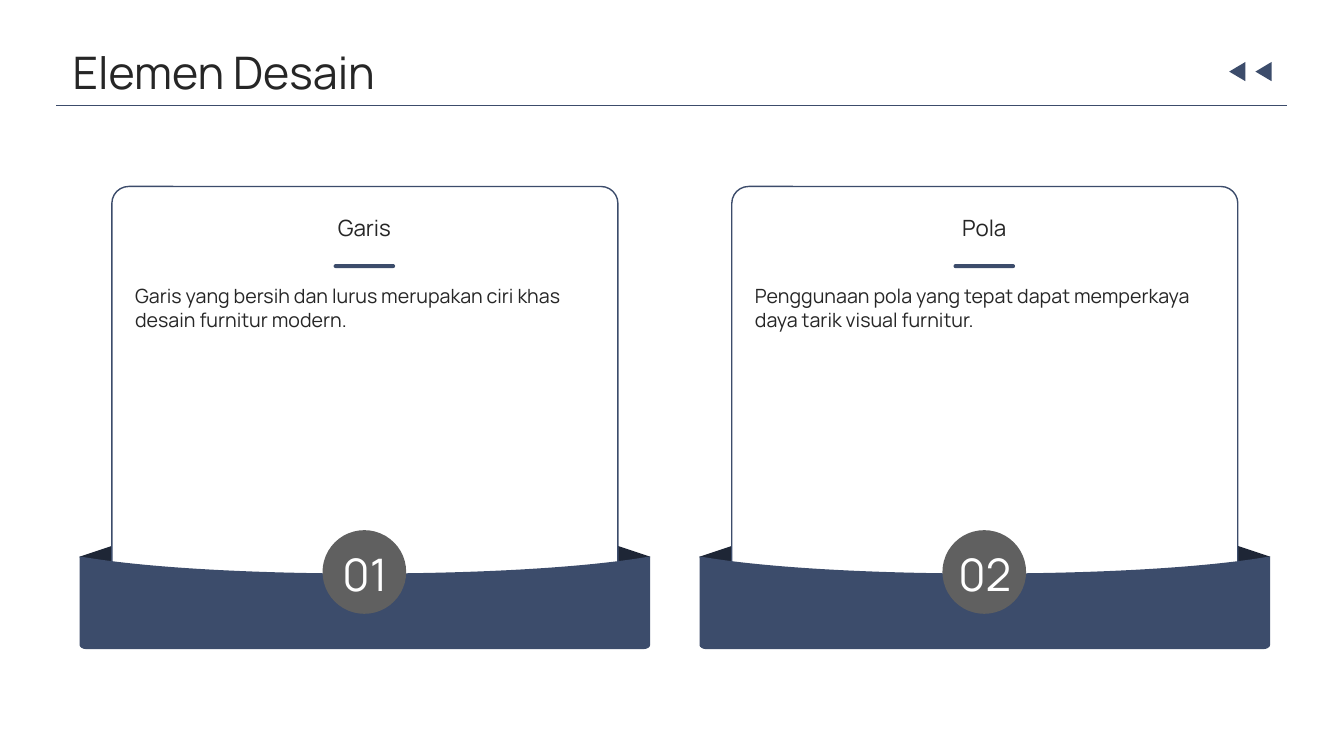
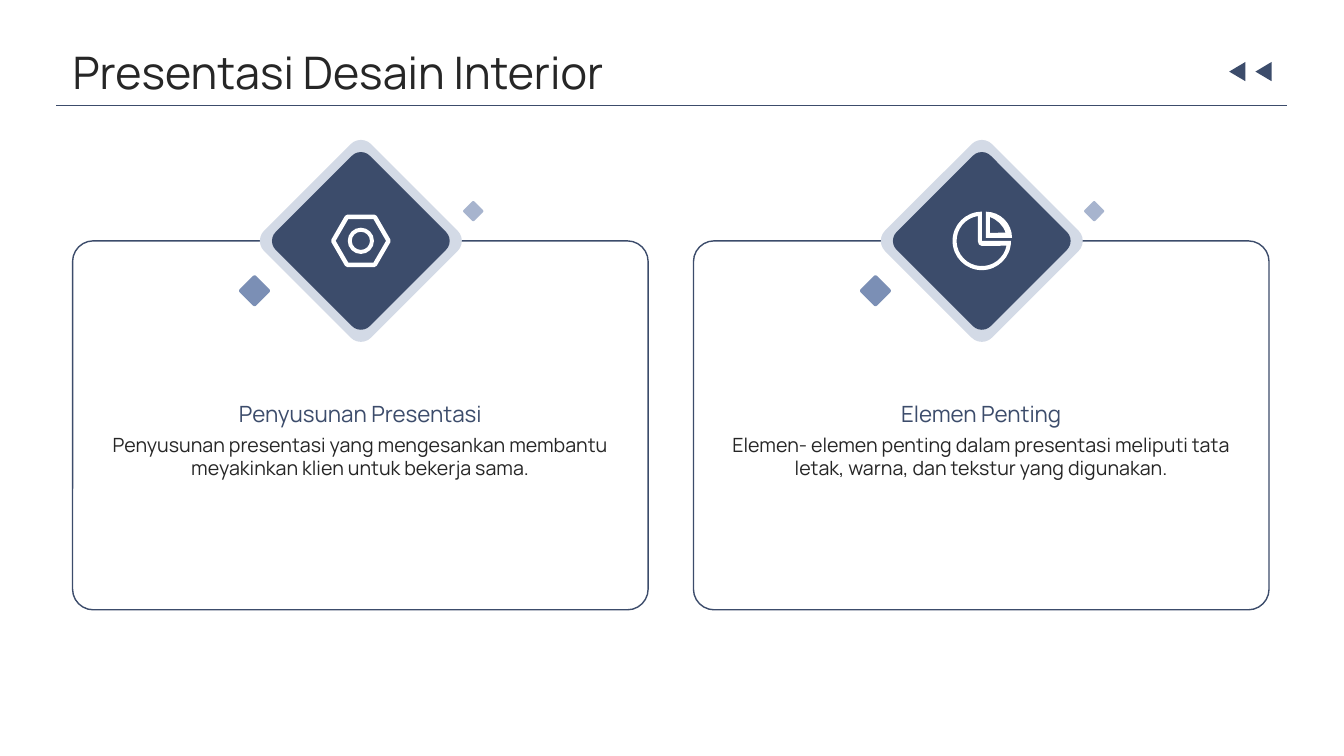
import math

import lxml.etree
import pptx
import pptx.dml.color
import pptx.enum.shapes
import pptx.enum.text
import pptx.oxml.ns
import pptx.util

PX = 9144  # EMU per px, 100 px to the inch
WHITE, NAVY, DARK_NAVY, INK, GREY = "FFFFFF", "3C4C6B", "1E2636", "262626", "606060"
HALO, MID_BLUE, PALE_BLUE = "D3DAE6", "7B8FB5", "A7B4CE"

MSO = pptx.enum.shapes.MSO_SHAPE
ALIGN = pptx.enum.text.PP_ALIGN
ANCHOR = pptx.enum.text.MSO_ANCHOR
qn = pptx.oxml.ns.qn

TITLE = {"size": 32, "color": INK}
HEADING = {"size": 16, "color": INK}
BLUE_HEADING = {"size": 16, "color": NAVY}
BODY = {"size": 14, "color": INK}
NUMBER = {"size": 32, "color": WHITE}


def px(n):
    return pptx.util.Emu(round(n * PX))


def rgb(color):
    return pptx.dml.color.RGBColor.from_string(color)


def paint(sp, fill, line=None):
    sp.shadow.inherit = False
    sp.fill.solid()
    sp.fill.fore_color.rgb = rgb(fill)
    if line:
        sp.line.color.rgb = rgb(line)
        sp.line.width = pptx.util.Pt(1)
    else:
        sp.line.fill.background()
    return sp


def add_shape(slide, kind, box, fill, line=None, adj=None, rotation=0):
    sp = slide.shapes.add_shape(kind, *map(px, box))
    if adj is not None:
        sp.adjustments[0] = adj
    sp.rotation = rotation
    return paint(sp, fill, line)


def add_outline(slide, cx, cy, contours, fill):
    """Closed contours around (cx, cy): points, and triples of points for curves."""
    builder = None
    for start, *steps in contours:
        flat = [pt for step in steps for pt in (step if len(step) == 3 else [step])]
        first, *rest = [(px(cx + x), px(cy + y)) for x, y in [start, *flat]]
        if builder is None:
            builder = slide.shapes.build_freeform(*first, scale=1.0)
        else:
            builder.move_to(*first)
        builder.add_line_segments(rest, close=True)
    sp = paint(builder.convert_to_shape(), fill)
    lines = iter(list(sp._element.iter(qn("a:lnTo"))))
    for _, *steps in contours:
        for step in steps:
            segment = next(lines)
            if len(step) == 3:
                segment.tag = qn("a:cubicBezTo")
                for extra in (next(lines), next(lines)):
                    segment.append(extra[0])
                    extra.getparent().remove(extra)


def add_text(slide, box, text, font, align=ALIGN.LEFT, anchor=ANCHOR.TOP):
    tf = slide.shapes.add_textbox(*map(px, box)).text_frame
    frame = {"word_wrap": True, "vertical_anchor": anchor, "margin_left": 0,
             "margin_right": 0, "margin_top": 0, "margin_bottom": 0}
    for name, value in frame.items():
        setattr(tf, name, value)
    p = tf.paragraphs[0]
    p.alignment = align
    r = p.add_run()
    r.text = text
    for name, value in {"name": "Manrope", "size": pptx.util.Pt(font["size"])}.items():
        setattr(r.font, name, value)
    r.font.color.rgb = rgb(font["color"])


def add_header(slide, title):
    add_text(slide, (72, 46, 1188, 51), title, TITLE, anchor=ANCHOR.MIDDLE)
    for x in (1218, 1244):
        add_shape(slide, MSO.ISOSCELES_TRIANGLE, (x, 63, 19, 16), NAVY, rotation=270)
    rule = slide.shapes.add_connector(
        pptx.enum.shapes.MSO_CONNECTOR.STRAIGHT, *map(px, (56, 105, 1277, 105)))
    rule.line.color.rgb = rgb(NAVY)
    rule.line.width = pptx.util.Pt(0.75)
    lxml.etree.SubElement(rule._element.spPr, qn("a:effectLst"))


def polar(radius, degrees):
    a = math.radians(degrees)
    return radius * math.cos(a), radius * math.sin(a)


def arc(radius, start, end, cx=0, cy=0):
    """Start point and curves, clockwise from the right, in parts of 90 degrees at most."""
    count = math.ceil(abs(end - start) / 90)
    sweep = (end - start) / count
    pull = 4 / 3 * math.tan(math.radians(sweep) / 4)
    x, y = polar(radius, start)
    steps = [(cx + x, cy + y)]
    for i in range(count):
        u, v = polar(radius, start + sweep * (i + 1))
        steps.append(((cx + x - pull * y, cy + y + pull * x),
                      (cx + u + pull * v, cy + v - pull * u), (cx + u, cy + v)))
        x, y = u, v
    return steps


def add_tray(slide, cx):
    front = [(-283, 552), (-277, 553),
             ((-216, 563), (-115, 569), (0, 569)),
             ((115, 569), (216, 563), (277, 553)),
             (283, 552), (283, 640),
             ((283, 642), (280, 644), (276, 644)),
             (-276, 644),
             ((-280, 644), (-283, 642), (-283, 640))]
    add_outline(slide, cx, 0, [front], NAVY)


def add_tray_card(slide, cx, number, heading, body):
    for x, rotation in ((cx + 228, 288.4), (cx - 267, 71.6)):
        fold = add_shape(slide, MSO.RIGHT_TRIANGLE, (x, 530, 39, 62), DARK_NAVY,
                         rotation=rotation)
        if x > cx:
            fold._element.spPr.xfrm.set("flipH", "1")
    add_shape(slide, MSO.ROUNDED_RECTANGLE, (cx - 251, 185, 502, 451), WHITE, NAVY, 0.037)
    add_tray(slide, cx)
    add_text(slide, (cx - 228, 282, 454, 231), body, BODY)
    add_shape(slide, MSO.ROUNDED_RECTANGLE, (cx - 31, 262, 61, 4), NAVY, adj=0.5)
    add_shape(slide, MSO.OVAL, (cx - 42, 526, 83, 83), GREY)
    add_text(slide, (cx - 29, 539, 58, 57), number, NUMBER, ALIGN.CENTER, ANCHOR.BOTTOM)
    add_text(slide, (cx - 246, 196, 491, 60), heading, HEADING, ALIGN.CENTER, ANCHOR.MIDDLE)


def add_nut_icon(slide, cx, cy):
    corners = range(0, 360, 60)
    outer = [polar(29.3, a + cut) for a in corners for cut in (-2.5, 2.5)]
    inner = [polar(25, a) for a in corners]
    add_outline(slide, cx, cy, [arc(9, 0, 360), arc(13, 0, 360), inner, outer], WHITE)


def add_pie_icon(slide, cx, cy):
    contours = [
        [(8, -8), *arc(25, -71, -19)],
        [(4, -3), *arc(26, -90, 0, 4, -3)],
        [*arc(25, 11, 261), (-4, 0), ((-4, 3), (-2, 5), (0, 5))],
        [(0, 0), *arc(29, 0, 270)],
    ]
    add_outline(slide, cx, cy, contours, WHITE)


def add_diamond_card(slide, left, add_icon, heading, body):
    def add_diamond(x, y, side, color):
        add_shape(slide, MSO.ROUNDED_RECTANGLE, (left + x, y, side, side), color,
                  adj=0.095, rotation=45)

    add_shape(slide, MSO.ROUNDED_RECTANGLE, (left, 239, 571, 366), WHITE, NAVY, 0.056)
    add_diamond(211, 164, 150, HALO)
    add_diamond(220, 173, 132, NAVY)
    add_icon(slide, left + 286, 239)
    add_text(slide, (left + 15, 429, 541, 147), body, BODY, ALIGN.CENTER)
    add_diamond(169, 277, 23, MID_BLUE)
    add_diamond(390, 202, 15, PALE_BLUE)
    add_text(slide, (left + 15, 350, 541, 74), heading, BLUE_HEADING,
             ALIGN.CENTER, ANCHOR.BOTTOM)


def main():
    prs = pptx.Presentation()
    prs.slide_width, prs.slide_height = pptx.util.Inches(40 / 3), px(750)
    blank = prs.slide_layouts[6]

    slide = prs.slides.add_slide(blank)
    tray_cards = [
        ("01", "Garis",
         "Garis yang bersih dan lurus merupakan ciri khas desain furnitur modern."),
        ("02", "Pola",
         "Penggunaan pola yang tepat dapat memperkaya daya tarik visual furnitur."),
    ]
    for i, card in enumerate(tray_cards):
        add_tray_card(slide, 362 + 615 * i, *card)
    add_header(slide, "Elemen Desain")

    slide = prs.slides.add_slide(blank)
    diamond_cards = [
        (add_nut_icon, "Penyusunan Presentasi",
         "Penyusunan presentasi yang mengesankan membantu meyakinkan klien"
         " untuk bekerja sama."),
        (add_pie_icon, "Elemen Penting",
         "Elemen- elemen penting dalam presentasi meliputi tata letak, warna,"
         " dan tekstur yang digunakan."),
    ]
    for i, card in enumerate(diamond_cards):
        add_diamond_card(slide, 72 + 616 * i, *card)
    add_header(slide, "Presentasi Desain Interior")

    prs.save("out.pptx")


if __name__ == "__main__":
    main()
